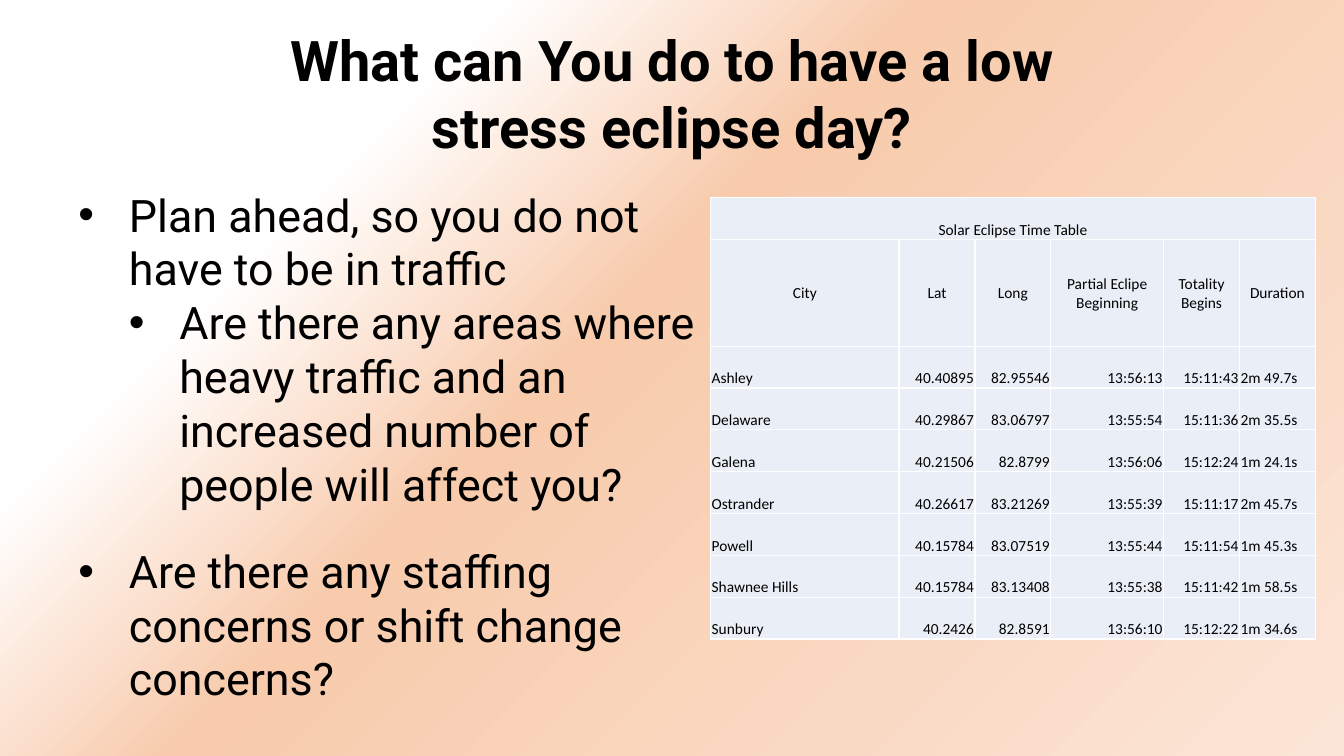
from dataclasses import dataclass

from lxml.etree import SubElement
from pptx import Presentation
from pptx.dml.color import RGBColor
from pptx.enum.text import MSO_ANCHOR, MSO_AUTO_SIZE, PP_ALIGN
from pptx.oxml import parse_xml
from pptx.oxml.ns import nsdecls, qn
from pptx.slide import Slide
from pptx.table import _Cell
from pptx.text.text import TextFrame, _Paragraph
from pptx.util import Pt


@dataclass(frozen=True)
class Theme:
    ink: str = "000000"
    cell_fill: str = "EAEFF7"
    border: str = "FFFFFF"
    background: tuple[tuple[int, str], ...] = (
        (0, "FBE5D6"), (56, "F8CBAD"), (76, "FFFFFF"), (100, "FFFFFF"))
    text_font: str = "Roboto"
    table_font: str = "Calibri"
    title_size: float = 40
    bullet_size: float = 32
    table_size: float = 11


@dataclass(frozen=True)
class Box:
    left: float
    top: float
    width: float
    height: float

    def lengths(self) -> tuple[Pt, Pt, Pt, Pt]:
        return Pt(self.left), Pt(self.top), Pt(self.width), Pt(self.height)


@dataclass(frozen=True)
class Bullet:
    text: str
    level: int = 0
    space_before: float = 0


THEME = Theme()
TITLE_BOX = Box(155.5, 14.4, 648.7, 104.4)
BULLET_BOX = Box(13, 130.3, 494.6, 472.3)
TABLE_BOX = Box(507.6, 141.1, 432, 315.5)

TITLE = "What can You do to have a low stress eclipse day?"
BULLETS = (
    Bullet("Plan ahead, so you do not have to be in traffic"),
    Bullet("Are there any areas where heavy traffic and an increased number "
           "of people will affect you?", level=1),
    Bullet("Are there any staffing concerns or shift change concerns?", space_before=24),
)
BULLET_STEP = 36

TABLE_TITLE = "Solar Eclipse Time Table"
HEADERS = ("City", "Lat", "Long", "Partial Eclipe Beginning", "Totality Begins", "Duration")
CITIES = (
    ("Ashley", "40.40895", "82.95546", "13:56:13", "15:11:43", "2m 49.7s"),
    ("Delaware", "40.29867", "83.06797", "13:55:54", "15:11:36", "2m 35.5s"),
    ("Galena", "40.21506", "82.8799", "13:56:06", "15:12:24", "1m 24.1s"),
    ("Ostrander", "40.26617", "83.21269", "13:55:39", "15:11:17", "2m 45.7s"),
    ("Powell", "40.15784", "83.07519", "13:55:44", "15:11:54", "1m 45.3s"),
    ("Shawnee Hills", "40.15784", "83.13408", "13:55:38", "15:11:42", "1m 58.5s"),
    ("Sunbury", "40.2426", "82.8591", "13:56:10", "15:12:22", "1m 34.6s"),
)
COLUMN_WIDTHS = (134.6, 54.2, 54.2, 80.6, 54.2, 54.2)
ROW_HEIGHT = 29.9
HEADER_HEIGHT = 76.3
CELL_INSET = 0.72
LEFT, CENTER, RIGHT = PP_ALIGN.LEFT, PP_ALIGN.CENTER, PP_ALIGN.RIGHT
CITY_ALIGNMENTS = (LEFT, RIGHT, RIGHT, RIGHT, RIGHT, LEFT)


def paint_background(slide: Slide) -> None:
    fill = slide.background.fill
    fill.gradient()
    fill.gradient_angle = 135
    stops = next(slide.element.iter(qn("a:gsLst")))
    for default_stop in list(stops):
        stops.remove(default_stop)
    for position, color in THEME.background:
        stop = SubElement(stops, qn("a:gs"), pos=str(position * 1000))
        SubElement(stop, qn("a:srgbClr"), val=color)


def add_run(paragraph: _Paragraph, text: str, font_name: str, size: float,
            bold: bool = False) -> None:
    run = paragraph.add_run()
    run.text = text
    run.font.name = font_name
    run.font.size = Pt(size)
    run.font.bold = bold
    run.font.color.rgb = RGBColor.from_string(THEME.ink)


def add_text_frame(slide: Slide, box: Box) -> TextFrame:
    frame = slide.shapes.add_textbox(*box.lengths()).text_frame
    frame.word_wrap = True
    frame.auto_size = MSO_AUTO_SIZE.SHAPE_TO_FIT_TEXT
    return frame


def add_title(slide: Slide) -> None:
    paragraph = add_text_frame(slide, TITLE_BOX).paragraphs[0]
    paragraph.alignment = CENTER
    add_run(paragraph, TITLE, THEME.text_font, THEME.title_size, bold=True)


def add_bullets(slide: Slide) -> None:
    frame = add_text_frame(slide, BULLET_BOX)
    for index, bullet in enumerate(BULLETS):
        paragraph = frame.add_paragraph() if index else frame.paragraphs[0]
        paragraph.level = bullet.level
        if bullet.space_before:
            paragraph.space_before = Pt(bullet.space_before)
        properties = paragraph._p.get_or_add_pPr()
        properties.set("marL", str(Pt(BULLET_STEP * (bullet.level + 2))))
        properties.set("indent", str(-Pt(BULLET_STEP)))
        SubElement(properties, qn("a:buFont"), typeface="Arial")
        SubElement(properties, qn("a:buChar"), char="•")
        add_run(paragraph, bullet.text, THEME.text_font, THEME.bullet_size)


def style_cell(cell: _Cell, anchor: MSO_ANCHOR) -> None:
    cell.fill.solid()
    cell.fill.fore_color.rgb = RGBColor.from_string(THEME.cell_fill)
    cell.vertical_anchor = anchor
    cell.margin_left = cell.margin_right = cell.margin_top = Pt(CELL_INSET)
    cell.margin_bottom = Pt(0)
    properties = cell._tc.get_or_add_tcPr()
    for index, side in enumerate(("lnL", "lnR", "lnT", "lnB")):
        properties.insert(index, parse_xml(
            f'<a:{side} {nsdecls("a")} w="{Pt(1)}"><a:solidFill>'
            f'<a:srgbClr val="{THEME.border}"/></a:solidFill></a:{side}>'))


def write_cell(cell: _Cell, text: str, alignment: PP_ALIGN) -> None:
    paragraph = cell.text_frame.paragraphs[0]
    paragraph.alignment = alignment
    add_run(paragraph, text, THEME.table_font, THEME.table_size)


def add_time_table(slide: Slide) -> None:
    table = slide.shapes.add_table(
        len(CITIES) + 2, len(HEADERS), *TABLE_BOX.lengths()).table
    table.first_row = table.horz_banding = False
    for column, width in zip(table.columns, COLUMN_WIDTHS):
        column.width = Pt(width)
    for index, row in enumerate(table.rows):
        is_header = index == 1
        row.height = Pt(HEADER_HEIGHT if is_header else ROW_HEIGHT)
        for cell in row.cells:
            style_cell(cell, MSO_ANCHOR.MIDDLE if is_header else MSO_ANCHOR.BOTTOM)

    title_cell = table.cell(0, 0)
    title_cell.merge(table.cell(0, len(HEADERS) - 1))
    write_cell(title_cell, TABLE_TITLE, CENTER)
    for row_index, texts in enumerate((HEADERS, *CITIES), start=1):
        alignments = (CENTER,) * len(HEADERS) if row_index == 1 else CITY_ALIGNMENTS
        for column_index, (text, alignment) in enumerate(zip(texts, alignments)):
            write_cell(table.cell(row_index, column_index), text, alignment)


def main() -> None:
    presentation = Presentation()
    presentation.slide_width = Pt(960)
    presentation.slide_height = Pt(540)
    slide = presentation.slides.add_slide(presentation.slide_layouts[6])
    paint_background(slide)
    add_bullets(slide)
    add_title(slide)
    add_time_table(slide)
    presentation.save("out.pptx")


if __name__ == "__main__":
    main()
